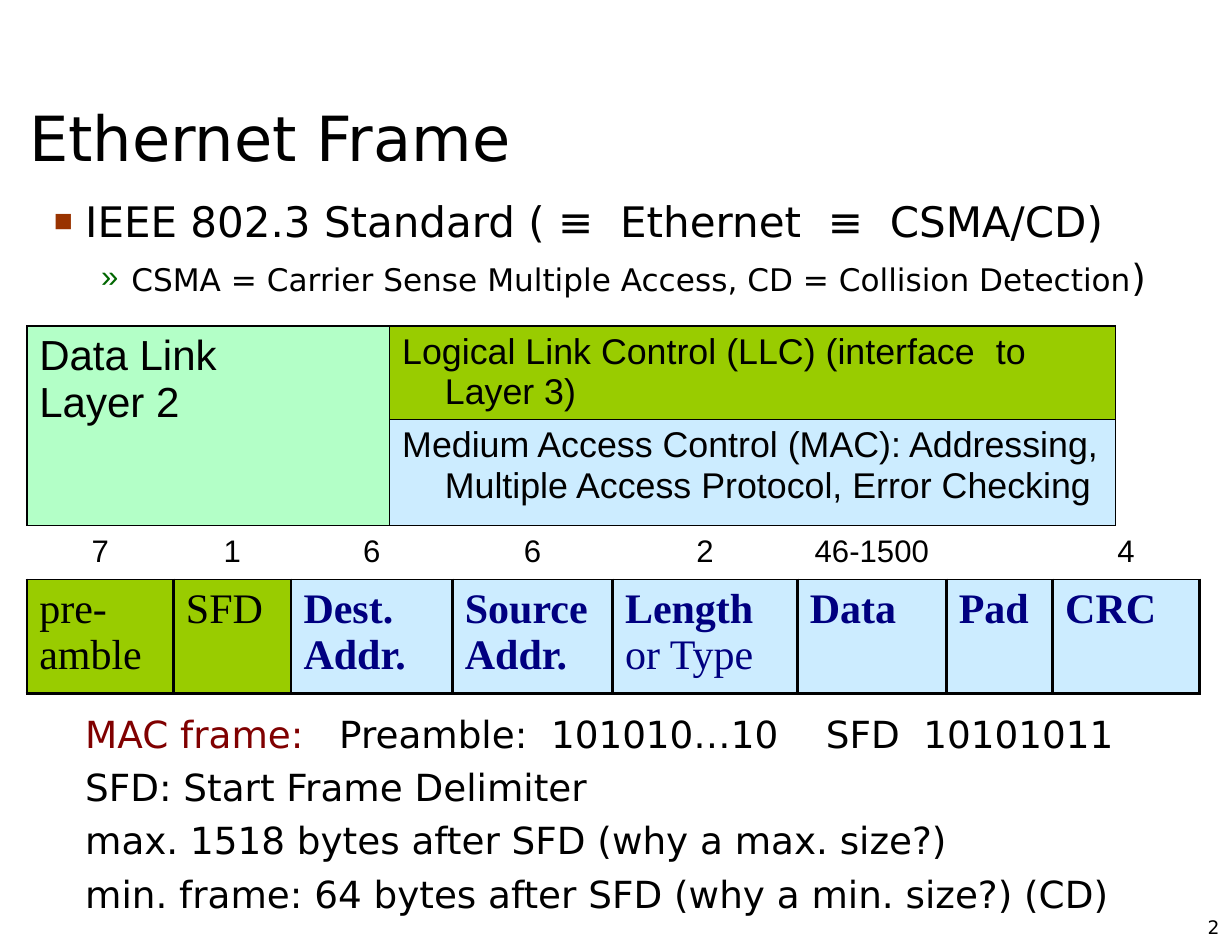
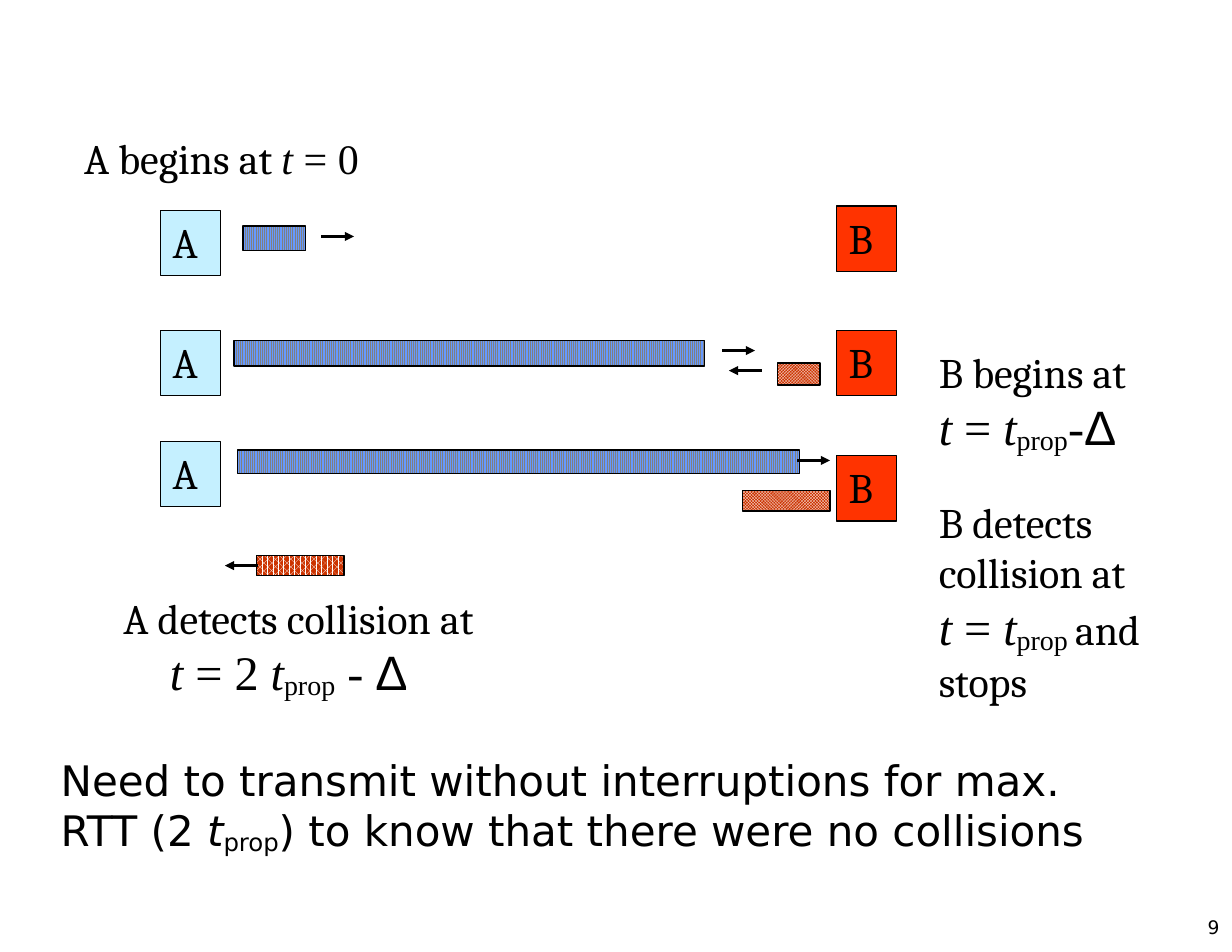
from dataclasses import dataclass

from lxml.etree import SubElement
from pptx import Presentation
from pptx.dml.color import RGBColor
from pptx.enum.dml import MSO_PATTERN
from pptx.enum.shapes import MSO_CONNECTOR, MSO_SHAPE
from pptx.enum.text import MSO_ANCHOR, MSO_AUTO_SIZE, PP_ALIGN
from pptx.oxml.ns import qn
from pptx.util import Pt


@dataclass(frozen=True)
class Theme:
    black: str = "000000"
    white: str = "FFFFFF"
    maroon: str = "800000"
    navy: str = "000080"
    green: str = "99CC00"
    mint: str = "B3FFC7"
    sky: str = "CCECFF"
    ice: str = "C5F0FF"
    red: str = "FF3300"
    rust: str = "CC3300"
    blue: str = "6699FF"
    gray: str = "808080"
    square: str = "993300"
    quote: str = "006600"
    sans: str = "DejaVu Sans"
    arial: str = "Arial"
    times: str = "Times New Roman"
    serif: str = "Cambria"
    title: int = 40
    math: int = 31
    head: int = 27
    body: int = 24
    layer: int = 23
    sub: int = 20
    page: int = 12


T = Theme()
FRAME = {"margin_left": Pt(8), "margin_right": Pt(8), "margin_top": Pt(4),
         "margin_bottom": Pt(4), "word_wrap": True,
         "auto_size": MSO_AUTO_SIZE.NONE, "vertical_anchor": MSO_ANCHOR.TOP}
MATH = {"name": T.times, "size": Pt(T.math)}
VAR = MATH | {"italic": True}
LOW = MATH | {"baseline": -10}
DELTA = ("Δ", MATH | {"name": T.arial})
SERIF = {"name": T.serif, "size": Pt(T.head)}
SANS = {"name": T.sans, "size": Pt(T.head)}


def style(obj, values):
    for key, value in values.items():
        setattr(obj, key, value)


def rgb(code):
    return RGBColor.from_string(code)


def gap(width):
    """A single space widened by some points."""
    return " ", {"spacing": width}


def para(*runs, left=0, first=0, bullet=None, **look):
    """Describe a paragraph; look holds python-pptx paragraph attributes."""
    return runs, left, first, bullet, look


def mark(props, color, scale, char):
    """Add a bullet to paragraph properties."""
    tint = SubElement(props, qn("a:buClr"))
    SubElement(tint, qn("a:srgbClr"), val=color)
    SubElement(props, qn("a:buSzPct"), val=str(scale * 1000))
    SubElement(props, qn("a:buFont"), typeface=T.arial)
    SubElement(props, qn("a:buChar"), char=char)


def add_run(line, text, look):
    run = line.add_run()
    run.text = text
    look = {"color": T.black} | look
    run.font.color.rgb = rgb(look.pop("color"))
    props = run._r.get_or_add_rPr()
    if "spacing" in look:
        props.set("spc", str(round(look.pop("spacing") * 100)))
    if "baseline" in look:
        props.set("baseline", str(look.pop("baseline") * 1000))
    style(run.font, look)


def write(frame, paras, base):
    """Fill a text frame; base is the run format that runs override."""
    for i, (runs, left, first, bullet, look) in enumerate(paras):
        line = frame.add_paragraph() if i else frame.paragraphs[0]
        style(line, {"alignment": PP_ALIGN.LEFT, "space_before": Pt(0)} | look)
        props = line._p.get_or_add_pPr()
        props.set("marL", str(Pt(left)))
        props.set("indent", str(Pt(first)))
        if bullet:
            mark(props, *bullet)
        for run in runs:
            text, own = (run, {}) if isinstance(run, str) else run
            add_run(line, text, base | own)


def place(shape, x, y, w, h):
    style(shape, dict(left=Pt(x), top=Pt(y), width=Pt(w), height=Pt(h)))


def fill_holder(shape, spot, paras, base, **look):
    place(shape, *spot)
    style(shape.text_frame, FRAME | look)
    write(shape.text_frame, paras, base)


def add_text(slide, spot, paras, base, **look):
    box = slide.shapes.add_textbox(*map(Pt, spot))
    style(box.text_frame, FRAME | look)
    write(box.text_frame, paras, base)


def add_page(slide, number):
    add_text(slide, (758, 579.5, 34, 32.5),
             [para(number, alignment=PP_ALIGN.RIGHT)],
             {"name": T.sans, "size": Pt(T.page)},
             vertical_anchor=MSO_ANCHOR.MIDDLE)


def add_rect(slide, spot, edge):
    rect = slide.shapes.add_shape(MSO_SHAPE.RECTANGLE, *map(Pt, spot))
    rect.shadow.inherit = False
    rect.line.color.rgb = rgb(T.black)
    rect.line.width = Pt(edge)
    return rect


def add_node(slide, x, y, name, color):
    node = add_rect(slide, (x, y, 39, 42), 0.75)
    node.fill.solid()
    node.fill.fore_color.rgb = rgb(color)
    style(node.text_frame, FRAME)
    write(node.text_frame, [para(name)], SERIF)


def add_signal(slide, spot, pattern, fore, back):
    fill = add_rect(slide, spot, 1).fill
    fill.patterned()
    fill.pattern = pattern
    fill.fore_color.rgb = rgb(fore)
    fill.back_color.rgb = rgb(back)


def add_arrow(slide, x, y, reach):
    """Draw a level arrow; a negative reach points left."""
    arrow = slide.shapes.add_connector(
        MSO_CONNECTOR.STRAIGHT, Pt(x), Pt(y), Pt(x + reach), Pt(y))
    arrow.line.color.rgb = rgb(T.black)
    arrow.line.width = Pt(1.5)
    SubElement(arrow.line._get_or_add_ln(), qn("a:tailEnd"), type="triangle")
    SubElement(arrow._element.spPr, qn("a:effectLst"))


def add_grid(slide, x, y, widths, heights):
    table = slide.shapes.add_table(
        len(heights), len(widths), Pt(x), Pt(y),
        Pt(sum(widths)), Pt(sum(heights))).table
    style(table, {"first_row": False, "horz_banding": False})
    for col, width in zip(table.columns, widths):
        col.width = Pt(width)
    for row, height in zip(table.rows, heights):
        row.height = Pt(height)
    return table


def fill_cell(cell, paras, base, color, edges):
    """Write and paint a cell; edges are left, right, top, bottom widths."""
    style(cell, {k: v for k, v in FRAME.items() if k.startswith("margin")})
    write(cell.text_frame, paras, base)
    props = cell._tc.get_or_add_tcPr()
    for side, width in zip("LRTB", edges):
        line = SubElement(props, qn(f"a:ln{side}"), w=str(Pt(width)))
        if width:
            paint = SubElement(line, qn("a:solidFill"))
            SubElement(paint, qn("a:srgbClr"), val=T.black)
        else:
            SubElement(line, qn("a:noFill"))
    cell.fill.solid()
    cell.fill.fore_color.rgb = rgb(color)


def add_layers(slide):
    table = add_grid(slide, 17.3, 209.5, (233.3, 466.5), (60, 68))
    table.cell(0, 0).merge(table.cell(1, 0))
    edges = (1, 1, 1, 1)
    big = {"name": T.arial, "size": Pt(T.head)}
    small = big | {"size": Pt(T.layer)}
    fill_cell(table.cell(0, 0), [para("Data Link"), para("Layer 2")],
              big, T.mint, edges)
    fill_cell(table.cell(1, 0), [], big, T.mint, edges)
    tasks = [
        (("Logical Link Control (LLC) (interface", gap(6.4), "to Layer 3)"),
         T.green),
        (("Medium Access Control (MAC): Addressing, "
          "Multiple Access Protocol, Error Checking",), T.sky)]
    for row, (runs, color) in enumerate(tasks):
        fill_cell(table.cell(row, 1), [para(*runs, left=27.4, first=-27.4)],
                  small, color, edges)


def add_fields(slide):
    bold = {"bold": True}
    fields = [
        (94.3, "7", ["pre-amble"]), (75.6, "1", ["SFD"]),
        (103.7, "6", [("Dest.", bold), ("Addr.", bold)]),
        (103, "6", [("Source", bold), ("Addr.", bold)]),
        (118.8, "2", [("Length", bold), "or Type"]),
        (95.8, "46-1500", [("Data", bold)]),
        (68.4, "", [("Pad", bold)]), (94.3, "4", [("CRC", bold)])]
    table = add_grid(slide, 17.3, 339.8, [f[0] for f in fields], (32.6, 73.4))
    count = {"name": T.arial, "size": Pt(T.sub)}
    for col, (_, size, lines) in enumerate(fields):
        lead = col < 2
        fill_cell(table.cell(0, col), [para(size, alignment=PP_ALIGN.CENTER)],
                  count, T.white, (0, 0, 0, 1))
        label = {"name": T.times, "size": Pt(T.head),
                 "color": T.black if lead else T.navy}
        fill_cell(table.cell(1, col), [para(line) for line in lines], label,
                  T.green if lead else T.sky, (2, 2, 1, 2))


def build_frame(deck):
    slide = deck.slides.add_slide(deck.slide_layouts[1])
    fill_holder(slide.shapes.title, (10.8, 50.4, 758, 75),
                [para("Ethernet Frame")], SANS | {"size": Pt(T.title)},
                vertical_anchor=MSO_ANCHOR.MIDDLE)
    wide = gap(8.6)
    fill_holder(slide.placeholders[1], (16.6, 121.7, 732, 85.7), [
        para("IEEE 802.3 Standard ( ≡", wide, "Ethernet", wide, "≡", wide,
             "CSMA/CD)", left=30.2, first=-20.2, bullet=(T.square, 75, "■")),
        para(("CSMA = Carrier Sense Multiple Access, CD = Collision Detection",
              {"size": Pt(T.sub)}), (")", {"size": Pt(T.body)}),
             left=59.8, first=-19.4, bullet=(T.quote, 100, "»"),
             level=1, space_before=Pt(5.5))], SANS)
    add_layers(slide)
    add_fields(slide)
    notes = ["SFD: Start Frame Delimiter",
             "max. 1518 bytes after SFD (why a max. size?)",
             "min. frame: 64 bytes after SFD (why a min. size?) (CD)"]
    add_text(slide, (46.8, 453, 734.4, 147), [
        para(("MAC frame:", {"color": T.maroon}), gap(15.3), "Preamble:",
             gap(7.6), "101010…10", gap(22.9), "SFD", gap(7.6), "10101011"),
        *(para(note, space_before=Pt(5.5)) for note in notes)],
        SANS | {"size": Pt(T.body)})
    add_page(slide, "2")


def build_timing(deck):
    slide = deck.slides.add_slide(deck.slide_layouts[6])
    add_text(slide, (31, 481, 700, 73.5), [
        para("Need to transmit without interruptions for max. RTT (2 ",
             ("t", {"italic": True}), ("prop", {"baseline": -10}),
             ") to know that there were no collisions")], SANS)
    add_text(slide, (46, 81.4, 231, 40), [
        para("A begins at ", ("t ", {"name": T.times, "italic": True}),
             ("= 0", {"name": T.times}))], SERIF)
    prop = [("t", VAR), ("prop", LOW)]
    start = [("t", VAR), (" = ", MATH), *prop]
    add_text(slide, (595.5, 219, 162, 240.5), [
        para("B begins at"),
        para(*start, ("-", MATH), DELTA),
        para("B detects", space_before=Pt(26)),
        para("collision at"),
        para(*start, (" ", LOW), "and stops")], SERIF)
    add_text(slide, (71.3, 376.6, 293, 78.5), [
        para("A detects collision at"),
        para(("t", VAR), (" = 2 ", MATH), *prop, (" - ", MATH), DELTA,
             left=30)], SERIF)

    for spot in [(156.2, 145.4, 40.3, 15.8), (150.5, 218.9, 302.4, 16.6),
                 (152.6, 289.4, 361.4, 15.1)]:
        add_signal(slide, spot, MSO_PATTERN.LIGHT_VERTICAL, T.gray, T.blue)
    check, dense = MSO_PATTERN.SMALL_CHECKER_BOARD, MSO_PATTERN.PERCENT_70
    for spot, pattern in [((499.7, 233.3, 27.4, 14.4), check),
                          ((477.4, 315.4, 56.2, 13), check),
                          ((164.9, 357.1, 56.2, 13), dense)]:
        add_signal(slide, spot, pattern, T.white, T.rust)
    for x, y, reach in [(206.6, 152, 21), (464.4, 225.4, 21),
                        (489.6, 238.3, -21), (512.6, 296, 21),
                        (165.6, 363.6, -21)]:
        add_arrow(slide, x, y, reach)
    for top_a, top_b in [(135.4, 132.5), (212.4, 212.4), (283.7, 293)]:
        add_node(slide, 103, top_a, "A", T.ice)
        add_node(slide, 537.5, top_b, "B", T.red)
    add_page(slide, "9")


def main():
    deck = Presentation()
    style(deck, {"slide_width": Pt(792), "slide_height": Pt(612)})
    build_frame(deck)
    build_timing(deck)
    deck.save("out.pptx")


if __name__ == "__main__":
    main()
